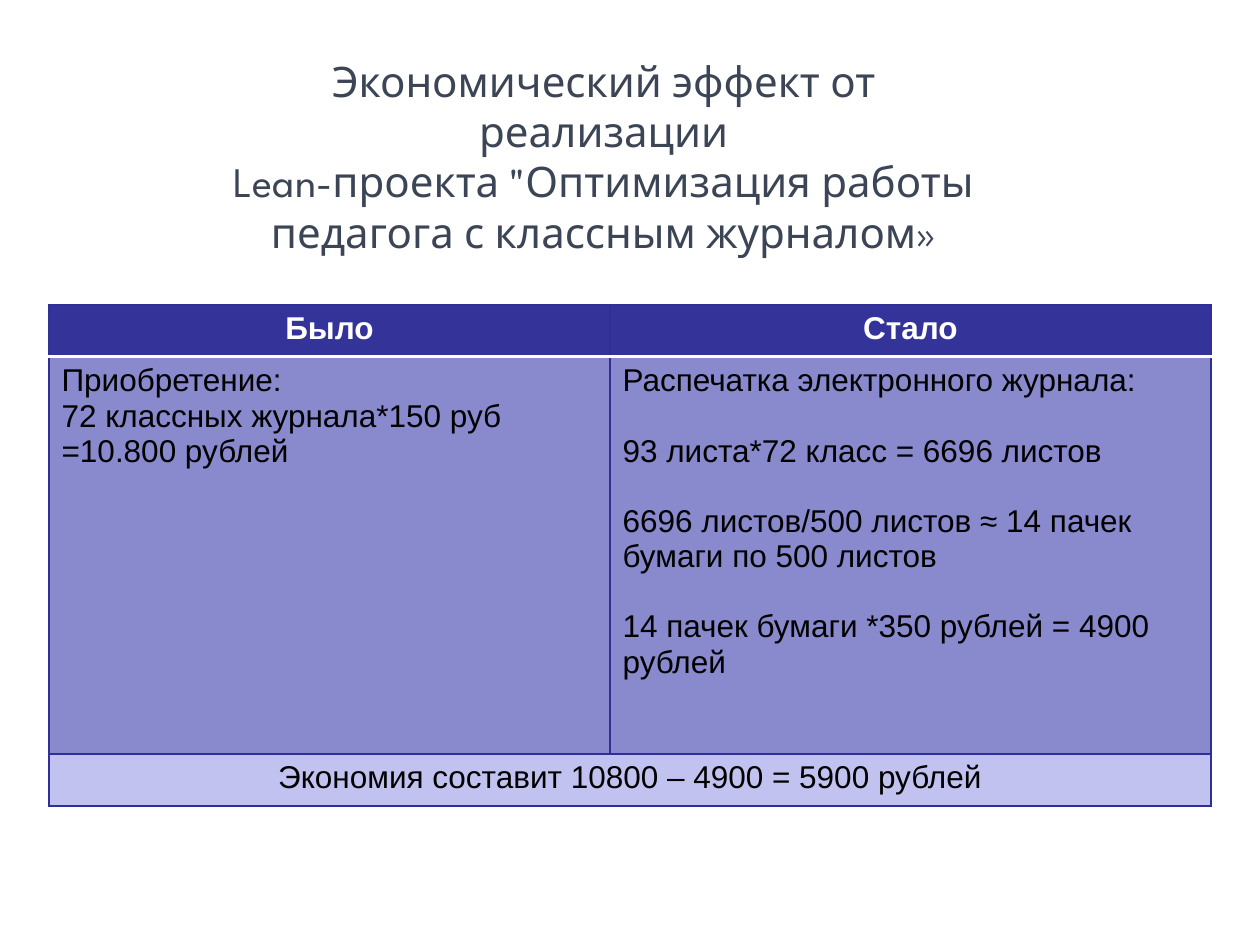
from dataclasses import dataclass

from lxml import etree
from pptx import Presentation
from pptx.dml.color import RGBColor
from pptx.enum.text import MSO_ANCHOR, PP_ALIGN
from pptx.oxml.ns import qn
from pptx.util import Emu, Pt

CENTER, LEFT = PP_ALIGN.CENTER, PP_ALIGN.LEFT
TOP = MSO_ANCHOR.TOP
PX_PER_INCH = 126
BLANK_LAYOUT = 6


@dataclass(frozen=True)
class Theme:
    title_font: str = "League Spartan"
    table_font: str = "Arial"
    title_size: int = 24
    table_size: int = 18
    line_gap: int = 20
    title: str = "3B4555"
    header: str = "333399"
    body: str = "8989CD"
    total: str = "C2C2F0"
    border: str = "2F2F98"
    white: str = "FFFFFF"
    black: str = "000000"
    border_width: float = 0.75
    header_rule: float = 2


THEME = Theme()

TITLE_LINES = [
    "Экономический эффект от реализации",
    'Lean-проекта "Оптимизация работы',
    "педагога с классным журналом»",
]
HEADERS = ["Было", "Стало"]
PURCHASE = ["Приобретение:", "72 классных журнала*150 руб =10.800 рублей"]
PRINTING = [
    "Распечатка электронного журнала:",
    "93 листа*72 класс = 6696 листов",
    "6696 листов/500 листов ≈ 14 пачек бумаги по 500 листов",
    "14 пачек бумаги *350 рублей = 4900 рублей",
]
SAVING = "Экономия составит 10800 – 4900 = 5900 рублей"


def px(count):
    return Emu(round(count * 914400 / PX_PER_INCH))


def add_span(para, text, font, size, color, bold=False):
    span = para.add_run()
    span.text = text
    span.font.name = font
    span.font.size = Pt(size)
    span.font.bold = bold
    span.font.color.rgb = RGBColor.from_string(color)


def add_title(page, left, top, width, height):
    box = page.shapes.add_textbox(px(left), px(top), px(width), px(height))
    frame = box.text_frame
    frame.word_wrap = True
    frame.vertical_anchor = TOP
    frame.margin_left = 0
    para = frame.paragraphs[0]
    para.alignment = CENTER
    for index, line in enumerate(TITLE_LINES):
        if index:
            para.add_line_break()
        add_span(para, line, THEME.title_font, THEME.title_size, THEME.title)


def set_borders(cell, top=None, bottom=None):
    """Draw all four sides; top and bottom may override the usual (color, points)."""
    usual = (THEME.border, THEME.border_width)
    sides = {"a:lnL": usual, "a:lnR": usual, "a:lnT": top or usual, "a:lnB": bottom or usual}
    properties = cell._tc.get_or_add_tcPr()
    for index, (tag, (color, points)) in enumerate(sides.items()):
        line = etree.Element(qn(tag), w=str(Pt(points)))
        fill = etree.SubElement(line, qn("a:solidFill"))
        etree.SubElement(fill, qn("a:srgbClr"), val=color)
        properties.insert(index, line)


def fill_cell(cell, lines, fill, color, alignment=CENTER, bold=False, gap=0):
    cell.fill.solid()
    cell.fill.fore_color.rgb = RGBColor.from_string(fill)
    frame = cell.text_frame
    for index, line in enumerate(lines):
        para = frame.add_paragraph() if index else frame.paragraphs[0]
        para.alignment = alignment
        if index and gap:
            para.space_before = Pt(gap)
        add_span(para, line, THEME.table_font, THEME.table_size, color, bold)


def add_savings_table(page, left, top, columns, rows):
    shape = page.shapes.add_table(
        len(rows), len(columns), px(left), px(top), px(sum(columns)), px(sum(rows))
    )
    table = shape.table
    for column, width in zip(table.columns, columns):
        column.width = px(width)
    for row, height in zip(table.rows, rows):
        row.height = px(height)

    rule = (THEME.white, THEME.header_rule)
    for index, header in enumerate(HEADERS):
        fill_cell(table.cell(0, index), [header], THEME.header, THEME.white, bold=True)
        set_borders(table.cell(0, index), bottom=rule)
        set_borders(table.cell(1, index), top=rule)
        set_borders(table.cell(2, index))
    fill_cell(table.cell(1, 0), PURCHASE, THEME.body, THEME.black, LEFT)
    fill_cell(table.cell(1, 1), PRINTING, THEME.body, THEME.black, LEFT, gap=THEME.line_gap)
    table.cell(2, 0).merge(table.cell(2, 1))
    fill_cell(table.cell(2, 0), [SAVING], THEME.total, THEME.black)


def main():
    deck = Presentation()
    deck.slide_width, deck.slide_height = px(1260), px(945)
    page = deck.slides.add_slide(deck.slide_layouts[BLANK_LAYOUT])
    add_savings_table(page, 49, 305, columns=[561, 601], rows=[52, 397, 52])
    add_title(page, 212, 49, 796, 165)
    deck.save("out.pptx")


if __name__ == "__main__":
    main()
